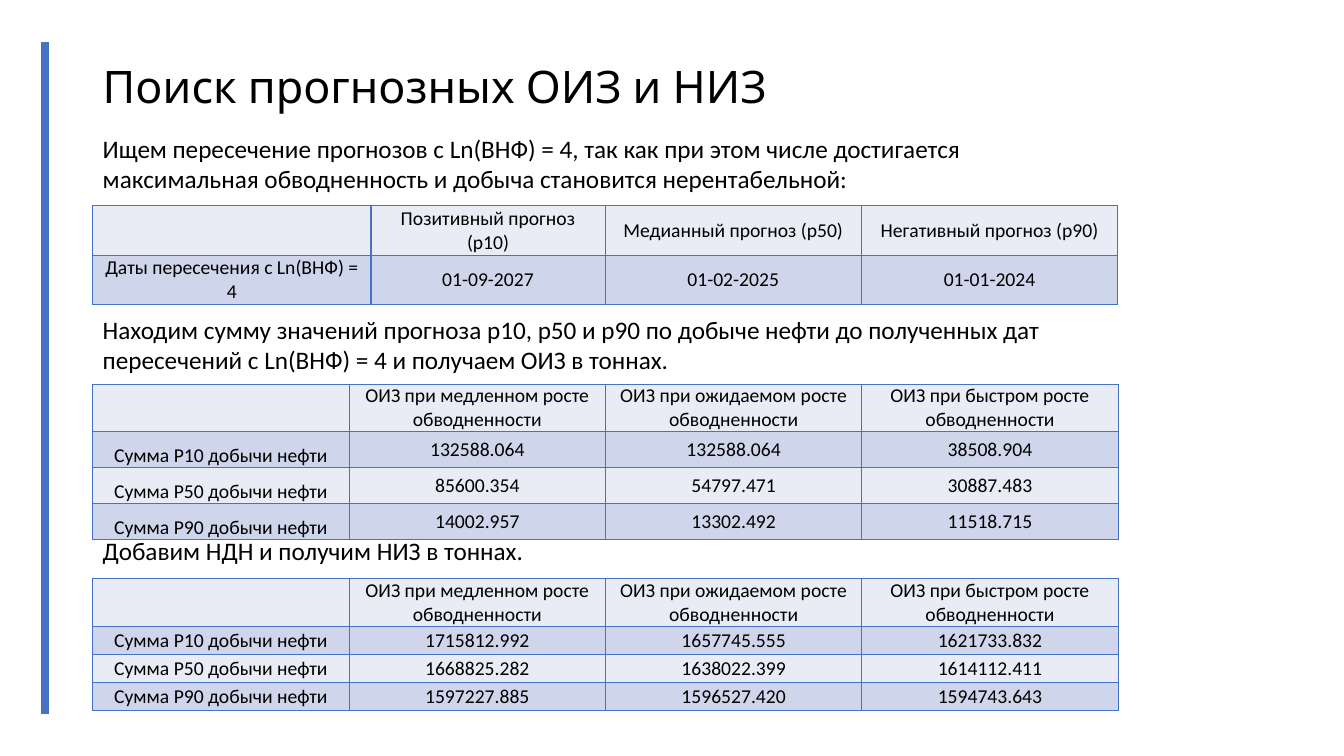
import pptx
import pptx.dml.color
import pptx.enum.shapes
import pptx.enum.text
import pptx.oxml
import pptx.oxml.ns
import pptx.util

Cm = pptx.util.Cm
Pt = pptx.util.Pt
RGBColor = pptx.dml.color.RGBColor
ANCHOR = pptx.enum.text.MSO_ANCHOR
ALIGN = pptx.enum.text.PP_ALIGN

BLUE = RGBColor(0x44, 0x72, 0xC4)
BLACK = RGBColor(0, 0, 0)
BANDS = [RGBColor(0xE9, 0xEB, 0xF5), RGBColor(0xCF, 0xD5, 0xEA)]

LEFT = 2.34
COL = 6.46
EVEN = [COL] * 4

HEADS = ["", "ОИЗ при медленном росте обводненности",
         "ОИЗ при ожидаемом росте обводненности",
         "ОИЗ при быстром росте обводненности"]
DATES = [
    ["", "Позитивный прогноз (p10)", "Медианный прогноз (p50)",
     "Негативный прогноз (p90)"],
    ["Даты пересечения c Ln(ВНФ) = 4", "01-09-2027", "01-02-2025", "01-01-2024"],
]
REST = [
    HEADS,
    ["Сумма P10 добычи нефти", "132588.064", "132588.064", "38508.904"],
    ["Сумма P50 добычи нефти", "85600.354", "54797.471", "30887.483"],
    ["Сумма P90 добычи нефти", "14002.957", "13302.492", "11518.715"],
]
TOTAL = [
    HEADS,
    ["Сумма P10 добычи нефти", "1715812.992", "1657745.555", "1621733.832"],
    ["Сумма P50 добычи нефти", "1668825.282", "1638022.399", "1614112.411"],
    ["Сумма P90 добычи нефти", "1597227.885", "1596527.420", "1594743.643"],
]


def style(para, size, face="Calibri"):
    for run in para.runs:
        run.font.size = Pt(size)
        run.font.name = face
        run.font.color.rgb = BLACK


def add_text(slide, text, top, width, height, size=18, face="Calibri"):
    box = slide.shapes.add_textbox(Cm(LEFT), Cm(top), Cm(width), Cm(height))
    frame = box.text_frame
    frame.word_wrap = True
    frame.text = text
    style(frame.paragraphs[0], size, face)
    return frame


def add_title(slide, text):
    frame = add_text(slide, text, 1.02, 29.21, 2.46, 32, "League Spartan")
    frame.vertical_anchor = ANCHOR.MIDDLE
    frame.paragraphs[0].line_spacing = 0.9


def add_edges(cell):
    props = cell._tc.get_or_add_tcPr()
    for spot, side in enumerate("LRTB"):
        edge = pptx.oxml.parse_xml(
            f'<a:ln{side} {pptx.oxml.ns.nsdecls("a")} w="12700"><a:solidFill>'
            f'<a:srgbClr val="{BLUE}"/></a:solidFill></a:ln{side}>')
        props.insert(spot, edge)


def fill_cell(cell, text, band):
    cell.fill.solid()
    cell.fill.fore_color.rgb = band
    add_edges(cell)
    if not text:
        return
    cell.vertical_anchor = ANCHOR.MIDDLE
    cell.margin_left = cell.margin_right = Cm(0.19)
    cell.margin_top = cell.margin_bottom = 0
    cell.text_frame.text = text
    para = cell.text_frame.paragraphs[0]
    para.alignment = ALIGN.CENTER
    style(para, 14)


def add_grid(slide, data, top, cols, rows, lead=None):
    frame = slide.shapes.add_table(len(rows), len(cols), Cm(LEFT), Cm(top),
                                   Cm(sum(cols)), Cm(sum(rows)))
    table = frame.table
    table.first_row = table.horz_banding = False
    for col, width in zip(table.columns, cols):
        col.width = Cm(width)
    for row, height in zip(table.rows, rows):
        row.height = Cm(height)
    for r, line in enumerate(data):
        for c, text in enumerate(line):
            cell = table.cell(r, c)
            fill_cell(cell, text, BANDS[r % 2])
            if text and (r == 0 or c == 0):
                para = cell.text_frame.paragraphs[0]
                para.space_after = Pt(8)
                if lead and r:
                    para.line_spacing = lead


def add_bar(slide):
    bar = slide.shapes.add_connector(pptx.enum.shapes.MSO_CONNECTOR.STRAIGHT,
                                     Cm(1.14), Cm(1.07), Cm(1.14), Cm(17.98))
    bar.line.color.rgb = BLUE
    bar.line.width = Pt(6)
    bar._element.spPr.append(pptx.oxml.parse_xml(
        f'<a:effectLst {pptx.oxml.ns.nsdecls("a")}/>'))


def main():
    deck = pptx.Presentation()
    deck.slide_width = Cm(33.87)
    deck.slide_height = Cm(19.05)
    slide = deck.slides.add_slide(deck.slide_layouts[6])
    add_grid(slide, REST, 9.68, EVEN, [0.76] * 4, 1.5)
    add_grid(slide, TOTAL, 14.58, EVEN, [1.02] + [0.71] * 3)
    add_bar(slide)
    add_grid(slide, DATES, 5.18, [7.01, 5.9, COL, COL], [1.25] * 2)
    add_text(slide, "Находим сумму значений прогноза p10, p50 и p90 по добыче "
             "нефти до полученных дат пересечений с Ln(ВНФ) = 4 и получаем "
             "ОИЗ в тоннах.", 7.8, 25.83, 1.8)
    add_text(slide, "Добавим НДН и получим НИЗ в тоннах.", 13.36, 27.5, 1.02)
    add_text(slide, "Ищем пересечение прогнозов с Ln(ВНФ) = 4, так как при этом "
             "числе достигается максимальная обводненность и добыча становится "
             "нерентабельной:", 3.23, 26, 1.8)
    add_title(slide, "Поиск прогнозных ОИЗ и НИЗ")
    deck.save("out.pptx")


if __name__ == "__main__":
    main()
